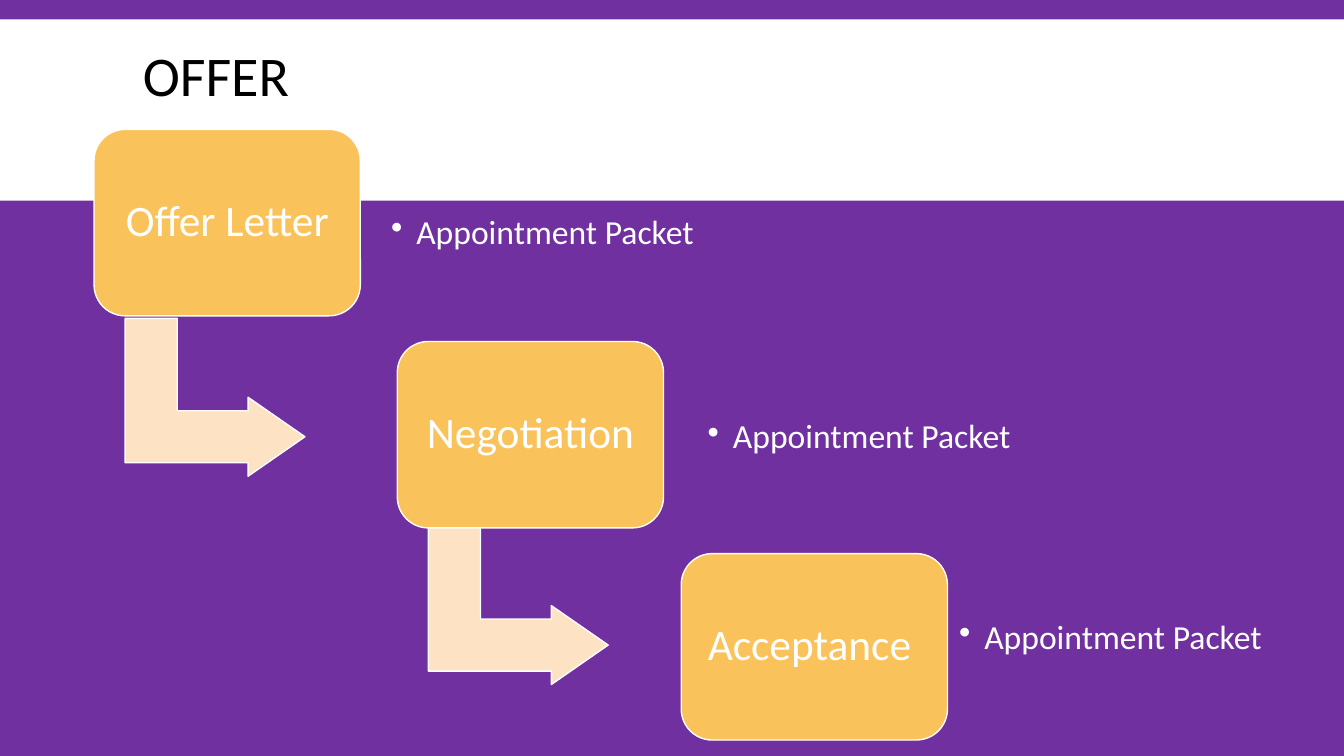
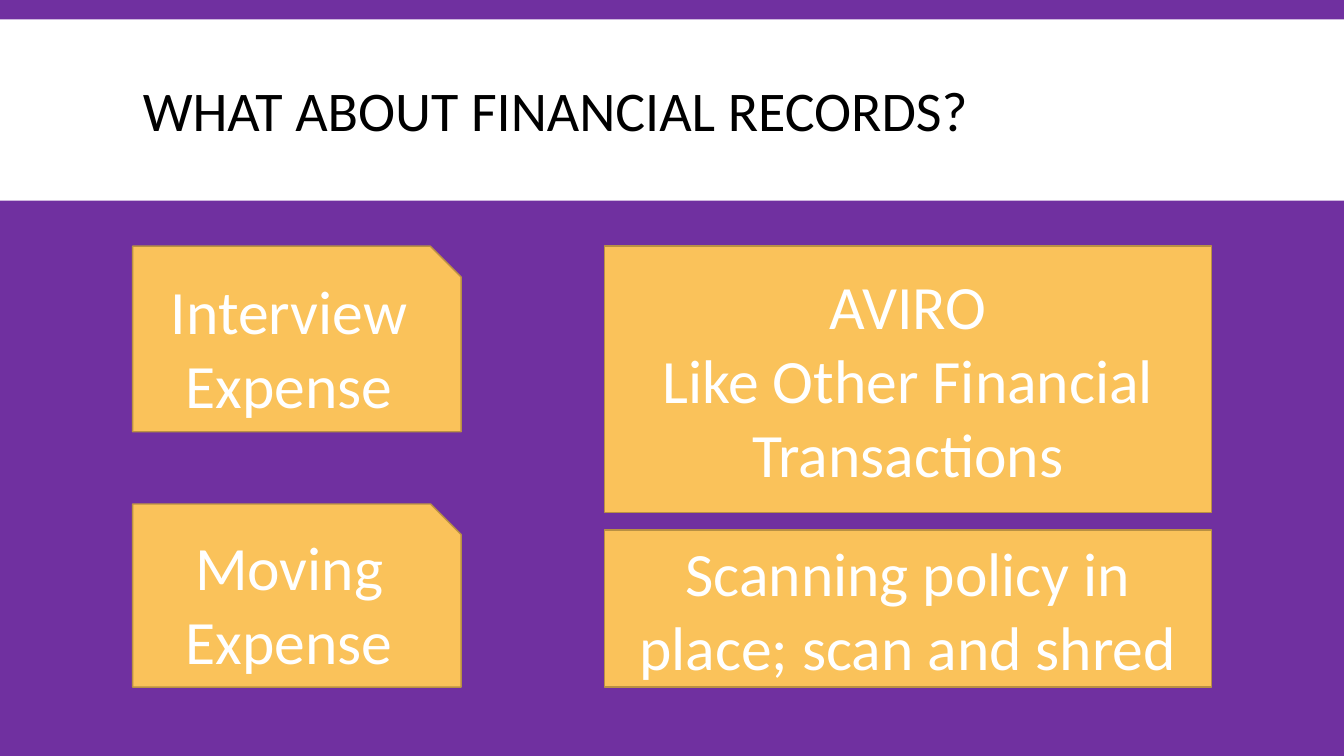
"""Build two slides on job offers and their financial records."""
from dataclasses import dataclass

from lxml import etree
from pptx import Presentation
from pptx.dml.color import RGBColor
from pptx.enum.shapes import MSO_SHAPE
from pptx.enum.text import MSO_ANCHOR, MSO_AUTO_SIZE, PP_ALIGN
from pptx.oxml.ns import qn
from pptx.util import Inches, Pt

RECTANGLE = MSO_SHAPE.RECTANGLE
ROUNDED = MSO_SHAPE.ROUNDED_RECTANGLE
SNIPPED = MSO_SHAPE.SNIP_1_RECTANGLE
BENT_ARROW = MSO_SHAPE.BENT_UP_ARROW
MIDDLE = MSO_ANCHOR.MIDDLE
FIXED = MSO_AUTO_SIZE.NONE
LEFT, CENTER = PP_ALIGN.LEFT, PP_ALIGN.CENTER

COLUMNS, ROWS = 160, 90
TITLE_ONLY = 5


@dataclass(frozen=True)
class Theme:
    """Colours, font and type sizes of the deck."""
    font: str = "Calibri"
    background: str = "7030A0"
    white: str = "FFFFFF"
    ink: str = "000000"
    gold: str = "FAC25A"
    gold_edge: str = "B99043"
    cream: str = "FDE3C4"
    title_size: int = 40
    card_size: int = 44
    step_size: int = 31
    bullet_size: int = 24


def assign(target, values):
    """Set each named value as an attribute of the target."""
    for name, value in values.items():
        setattr(target, name, value)


class SlideBuilder:
    """Hold the theme and the current slide, and place elements on a grid."""

    def __init__(self, theme):
        """Start a wide deck with a shared background."""
        self.theme = theme
        self.deck = Presentation()
        assign(self.deck, {"slide_width": Inches(13.33), "slide_height": Inches(7.5)})
        self.layout = self.deck.slide_layouts[TITLE_ONLY]
        fill = self.layout.background.fill
        fill.solid()
        fill.fore_color.rgb = RGBColor.from_string(theme.background)
        self.page = None

    def place(self, left, top, width, height):
        """Turn columns and rows into slide lengths."""
        column = self.deck.slide_width / COLUMNS
        row = self.deck.slide_height / ROWS
        return [round(left * column), round(top * row),
                round(width * column), round(height * row)]

    def add_page(self, title, title_rows):
        """Add a slide with its title, and the band to the layout once."""
        first = self.page is None
        self.page = self.deck.slides.add_slide(self.layout)
        if first:
            band = self.shape(RECTANGLE, (0, 2.3, COLUMNS, 21.6), self.theme.white)
            self.layout.shapes._spTree.insert(2, band._element)
        box = self.page.shapes.title
        area = self.place(15.8, 3.7, 128.4, title_rows)
        assign(box, dict(zip(("left", "top", "width", "height"), area)))
        self.set_text(box, [title], self.theme.title_size, self.theme.ink, LEFT, 0.85)

    def set_text(self, box, lines, size, color, align, spacing=1.0, inset=None):
        """Fill a box with formatted paragraphs and return them."""
        frame = box.text_frame
        assign(frame, {"word_wrap": True, "auto_size": FIXED, "vertical_anchor": MIDDLE})
        if inset is not None:
            sides = ("left", "top", "right", "bottom")
            assign(frame, {f"margin_{side}": Inches(inset) for side in sides})
        frame.text = "\n".join(lines)
        for para in frame.paragraphs:
            assign(para, {"alignment": align, "line_spacing": spacing})
            for span in para.runs:
                assign(span.font, {"name": self.theme.font, "size": Pt(size)})
                span.font.color.rgb = RGBColor.from_string(color)
        return frame.paragraphs

    def shape(self, kind, area, fill, edge=None):
        """Add a flat preset shape."""
        box = self.page.shapes.add_shape(kind, *self.place(*area))
        box.shadow.inherit = False
        box.fill.solid()
        box.fill.fore_color.rgb = RGBColor.from_string(fill)
        if edge:
            box.line.color.rgb = RGBColor.from_string(edge)
            box.line.width = Pt(1)
        else:
            box.line.fill.background()
        return box

    def card(self, kind, area, lines):
        """Add a gold card with large centred text."""
        theme = self.theme
        box = self.shape(kind, area, theme.gold, theme.gold_edge)
        self.set_text(box, lines, theme.card_size, theme.white, CENTER)

    def step(self, left, top, label):
        """Add a rounded step of the process."""
        theme = self.theme
        box = self.shape(ROUNDED, (left, top, 31.7, 22.2), theme.gold, theme.white)
        self.set_text(box, [label], theme.step_size, theme.white, CENTER, 0.9, 0.13)

    def arrow(self, left, top):
        """Add an arrow that turns from one step to the next."""
        theme = self.theme
        box = self.shape(BENT_ARROW, (left, top, 18.8, 21.4), theme.cream, theme.white)
        box.rotation = 90
        for index, value in enumerate((0.33, 0.25, 0.36)):
            box.adjustments[index] = value

    def bullet(self, area, text, inset):
        """Add a bulleted remark beside a step."""
        theme = self.theme
        box = self.page.shapes.add_textbox(*self.place(*area))
        for para in self.set_text(box, [text], theme.bullet_size, theme.white,
                                  LEFT, 0.9, inset):
            properties = para._p.get_or_add_pPr()
            properties.set("marL", str(Inches(0.25)))
            properties.set("indent", str(-Inches(0.25)))
            etree.SubElement(properties, qn("a:buChar")).set("char", "•")


def build_offer(builder):
    """Build the staircase of offer steps."""
    builder.add_page("OFFER", 11.6)
    steps = [
        ("Offer Letter", 11.2, 36.6, (45, 19.9, 64.1, 15.8), 0.13),
        ("Negotiation", 47.3, 61.4, (82.7, 43.2, 49.1, 17.9), 0.13),
        ("Acceptance ", 81.1, None, (113, 67.9, 40.8, 16.3), 0.1),
    ]
    for index, (label, left, arrow_top, remark_area, inset) in enumerate(steps):
        if arrow_top:
            builder.arrow(left + 5, arrow_top)
        builder.step(left, 15.4 + 25.25 * index, label)
        builder.bullet(remark_area, "Appointment Packet", inset)


def build_records(builder):
    """Build the cards on financial records."""
    builder.add_page("WHAT ABOUT FINANCIAL RECORDS?", 19.8)
    top, bottom = 29.3, 81.8
    columns = [
        (SNIPPED, 15.8, 39.1, [(top, 22.1, ["Interview Expense"]),
                               (60, bottom - 60, ["Moving Expense"])]),
        (RECTANGLE, 72, 72.2, [
            (top, 31.7, ["AVIRO", "Like Other Financial Transactions"]),
            (63.1, bottom - 63.1, ["Scanning policy in place; scan and shred"])]),
    ]
    for kind, left, width, cards in columns:
        for card_top, height, lines in cards:
            builder.card(kind, (left, card_top, width, height), lines)


def main():
    """Build and save the deck."""
    builder = SlideBuilder(Theme())
    build_offer(builder)
    build_records(builder)
    builder.deck.save("out.pptx")


if __name__ == "__main__":
    main()
